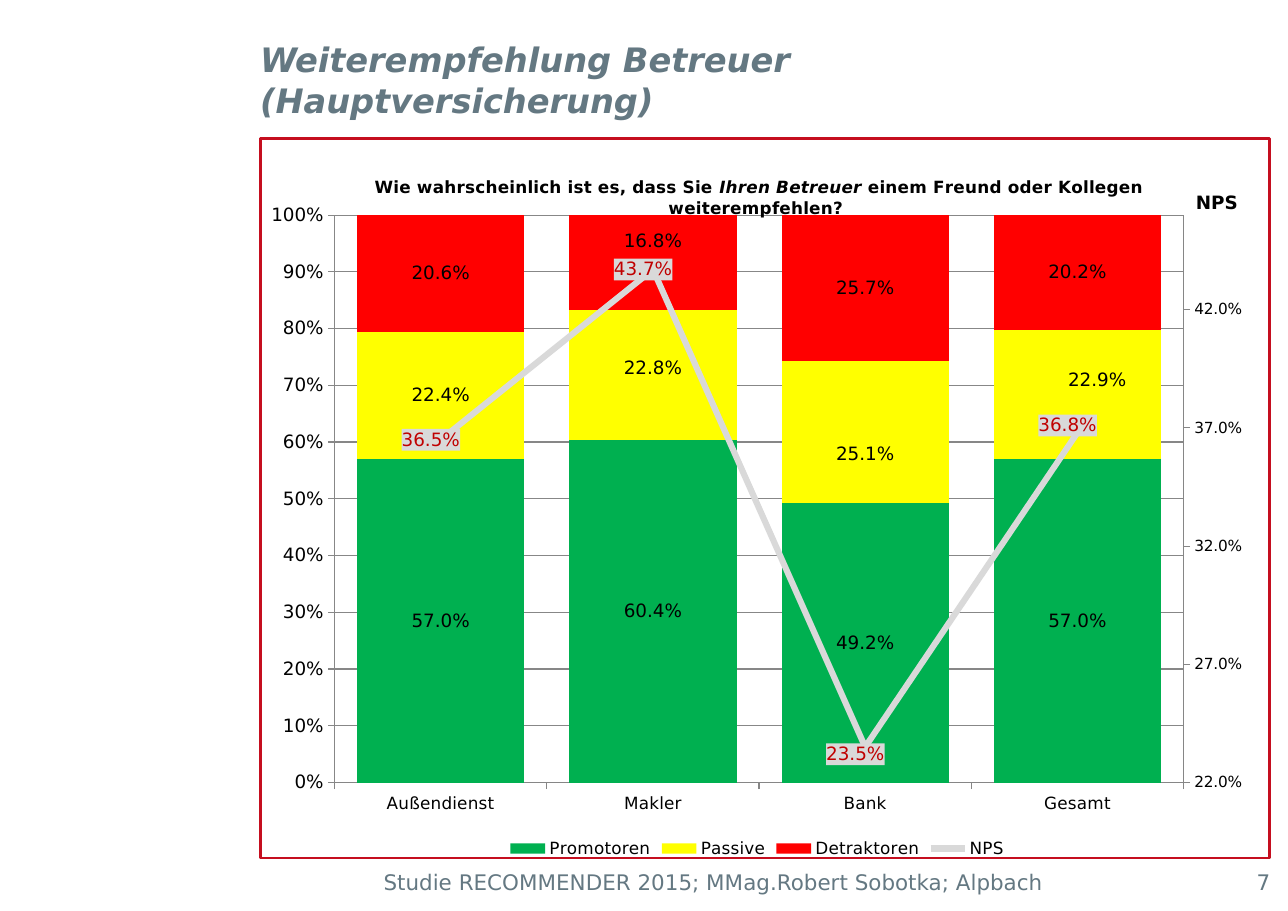
from copy import deepcopy

from pptx import Presentation
from pptx import util as u
from pptx.chart.data import CategoryChartData
from pptx.dml.color import RGBColor
from pptx.enum import chart as ch, shapes, text
from pptx.oxml import ns, parse_xml

HUES = {"frame": "C50E1F", "slate": "647882", "black": "000000", "axis": "868686",
        "green": "00B050", "yellow": "FFFF00", "red": "FF0000",
        "grey": "D9D9D9", "mark": "C00000"}
FONT = "DejaVu Sans"
GROUPS = ["Außendienst", "Makler", "Bank", "Gesamt"]
SERIES = [
    ("Promotoren", "green", [0.57, 0.604, 0.492, 0.57], {}),
    ("Passive", "yellow", [0.224, 0.228, 0.251, 0.229],
     {1: (0, -0.01), 2: (0, 0.03), 3: (0.02, -0.02)}),
    ("Detraktoren", "red", [0.206, 0.168, 0.257, 0.202], {1: (0, -0.03)}),
    ("NPS", "grey", [0.365, 0.437, 0.235, 0.368],
     {0: (-0.01, 0), 1: (-0.01, 0), 2: (-0.01, 0.01), 3: (-0.01, -0.01)}),
]
ASK = [("Wie wahrscheinlich ist es, dass Sie ", False), ("Ihren Betreuer", True),
       (" einem Freund oder Kollegen weiterempfehlen? ", False)]
AXES = """<c:plotArea %s>
<c:lineChart><c:grouping val="standard"/><c:varyColors val="0"/>
<c:marker val="1"/><c:axId val="501"/><c:axId val="502"/></c:lineChart>
<c:valAx><c:axId val="502"/><c:scaling><c:orientation val="minMax"/></c:scaling>
<c:delete val="0"/><c:axPos val="r"/><c:majorTickMark val="out"/>
<c:minorTickMark val="none"/><c:tickLblPos val="nextTo"/>
<c:crossAx val="501"/><c:crosses val="max"/></c:valAx>
<c:catAx><c:axId val="501"/><c:scaling><c:orientation val="minMax"/></c:scaling>
<c:delete val="1"/><c:axPos val="b"/><c:crossAx val="502"/></c:catAx>
</c:plotArea>""" % ns.nsdecls("c")


def place(x, y, size=None, mode="edge", inner=False):
    tags = [("layoutTarget", "inner")] if inner else []
    if mode:
        tags += [("xMode", mode), ("yMode", mode)]
    tags += [("x", x), ("y", y)]
    if size:
        tags += [("w", size[0]), ("h", size[1])]
    body = "".join(f'<c:{tag} val="{val}"/>' for tag, val in tags)
    return parse_xml(f'<c:layout {ns.nsdecls("c")}><c:manualLayout>{body}'
                     '</c:manualLayout></c:layout>')


def clear(node, *tags):
    for tag in tags:
        for old in node.findall(ns.qn(tag)):
            node.remove(old)


class Deck:
    def __init__(self, wide, high):
        self.prs = Presentation()
        self.prs.slide_width, self.prs.slide_height = u.Cm(wide), u.Cm(high)
        self.slide = self.prs.slides.add_slide(self.prs.slide_layouts[6])

    def hue(self, name):
        return RGBColor.from_string(HUES[name])

    def style(self, font, size, hue="black", bold=False, slant=False):
        font.name, font.size = FONT, u.Pt(size)
        font.bold, font.italic = bold, slant
        font.color.rgb = self.hue(hue)

    def frame(self, *box):
        rect = self.slide.shapes.add_shape(shapes.MSO_SHAPE.RECTANGLE, *map(u.Cm, box))
        rect.shadow.inherit = False
        rect.fill.background()
        rect.line.color.rgb = self.hue("frame")
        rect.line.width = u.Pt(1.75)

    def label(self, words, box, size, align, bold=False, pad=0.28):
        area = self.slide.shapes.add_textbox(*map(u.Cm, box)).text_frame
        area.word_wrap = True
        area.margin_left = area.margin_right = u.Cm(pad)
        area.vertical_anchor = text.MSO_ANCHOR.MIDDLE if bold else text.MSO_ANCHOR.TOP
        area.text = words
        para = area.paragraphs[0]
        para.alignment = align
        for run in para.runs:
            self.style(run.font, size, "slate", bold, bold)

    def axis(self, axis, size, form=None):
        axis.major_tick_mark = ch.XL_TICK_MARK.OUTSIDE
        axis.minor_tick_mark = ch.XL_TICK_MARK.NONE
        axis.format.line.color.rgb = self.hue("axis")
        self.style(axis.tick_labels.font, size)
        if form:
            axis.tick_labels.number_format = form
            axis.tick_labels.number_format_is_linked = False

    def head(self, title, parts, size, spot):
        para = title.text_frame.paragraphs[0]
        for words, slant in parts:
            run = para.add_run()
            run.text = words
            self.style(run.font, size, bold=True, slant=slant)
        node = title._element
        clear(node, "c:layout")
        node.find(ns.qn("c:tx")).addnext(place(*spot))

    def values(self, series, hue, shifts, back=None):
        labels = series.data_labels
        labels.show_value = True
        labels.number_format = "0.0%"
        labels.number_format_is_linked = False
        labels.position = ch.XL_LABEL_POSITION.CENTER
        self.style(labels.font, 12, hue)
        root = labels._element
        if back:
            fill = parse_xml(f'<c:spPr {ns.nsdecls("c", "a")}><a:solidFill>'
                             f'<a:srgbClr val="{HUES[back]}"/></a:solidFill></c:spPr>')
            root.find(ns.qn("c:numFmt")).addnext(fill)
        looks = [root.find(ns.qn(tag)) for tag in ("c:numFmt", "c:spPr", "c:txPr")]
        for spot, (x, y) in shifts.items():
            item = series.points[spot].data_label
            item.position = ch.XL_LABEL_POSITION.CENTER
            node = item._dLbl
            clear(node, "c:spPr", "c:txPr")
            parts = [place(x, y, mode=None)]
            parts += [deepcopy(look) for look in looks if look is not None]
            for part in reversed(parts):
                node.find(ns.qn("c:idx")).addnext(part)

    def split(self, chart):
        area = chart._chartSpace.chart.plotArea
        bars = area.find(ns.qn("c:barChart"))
        line, right, base = list(parse_xml(AXES))
        nps = bars.findall(ns.qn("c:ser"))[-1]
        clear(nps, "c:invertIfNegative")
        line.find(ns.qn("c:varyColors")).addnext(nps)
        bars.addnext(line)
        area.findall(ns.qn("c:valAx"))[-1].addnext(right)
        right.addnext(base)
        clear(area, "c:layout")
        area.insert(0, place(0.073, 0.1, (0.858, 0.788), inner=True))
        return right

    def chart(self, *box):
        data = CategoryChartData(number_format="0.0%")
        data.categories = GROUPS
        for name, _, vals, _ in SERIES:
            data.add_series(name, vals)
        kind = ch.XL_CHART_TYPE.COLUMN_STACKED_100
        chart = self.slide.shapes.add_chart(kind, *map(u.Cm, box), data).chart
        self.style(chart.font, 12)
        node = self.split(chart)
        bars, line = chart.plots
        bars.gap_width, bars.overlap = 27, 100
        bars.vary_by_categories = False
        for series, (_, hue, _, shifts) in zip(bars.series, SERIES):
            series.format.fill.solid()
            series.format.fill.fore_color.rgb = self.hue(hue)
            self.values(series, "black", shifts)
        nps = line.series[0]
        nps.smooth = False
        nps.marker.style = ch.XL_MARKER_STYLE.NONE
        nps.format.line.color.rgb = self.hue("grey")
        nps.format.line.width = u.Pt(4)
        self.values(nps, "mark", SERIES[-1][3], "grey")

        left = chart.value_axis
        right = type(left)(node)
        self.axis(chart.category_axis, 11)
        self.axis(left, 10, "0%")
        self.axis(right, 10, "0.0%")
        left.major_unit = 0.1
        left.has_major_gridlines = True
        left.major_gridlines.format.line.color.rgb = self.hue("axis")
        right.minimum_scale, right.maximum_scale = 0.22, 0.46
        right.major_unit = 0.05
        self.head(right.axis_title, [("NPS", False)], 12, (0.94, 0.06))
        turn = right.axis_title.text_frame._txBody.find(ns.qn("a:bodyPr"))
        turn.set("rot", "0")
        turn.set("vert", "horz")
        chart.has_title = True
        self.head(chart.chart_title, ASK, 11, (0.11, 0.04))
        chart.has_legend = True
        chart.legend.position = ch.XL_LEGEND_POSITION.BOTTOM
        chart.legend.include_in_layout = False
        self.style(chart.legend.font, 11)


def main():
    deck = Deck(29.7, 21)
    side = text.PP_ALIGN
    deck.frame(6, 3.2, 23.27, 16.58)
    deck.label("Studie RECOMMENDER 2015; MMag.Robert Sobotka; Alpbach",
               (6.05, 19.92, 20.8, 1), 14, side.CENTER)
    deck.label("7", (27.94, 19.92, 1.63, 1), 14, side.RIGHT)
    deck.label("Weiterempfehlung Betreuer\v(Hauptversicherung)",
               (6, 0.9, 18.46, 1.86), 22, side.LEFT, bold=True, pad=0)
    deck.chart(6.05, 3.3, 22.82, 16.6)
    deck.prs.save("out.pptx")


if __name__ == "__main__":
    main()
